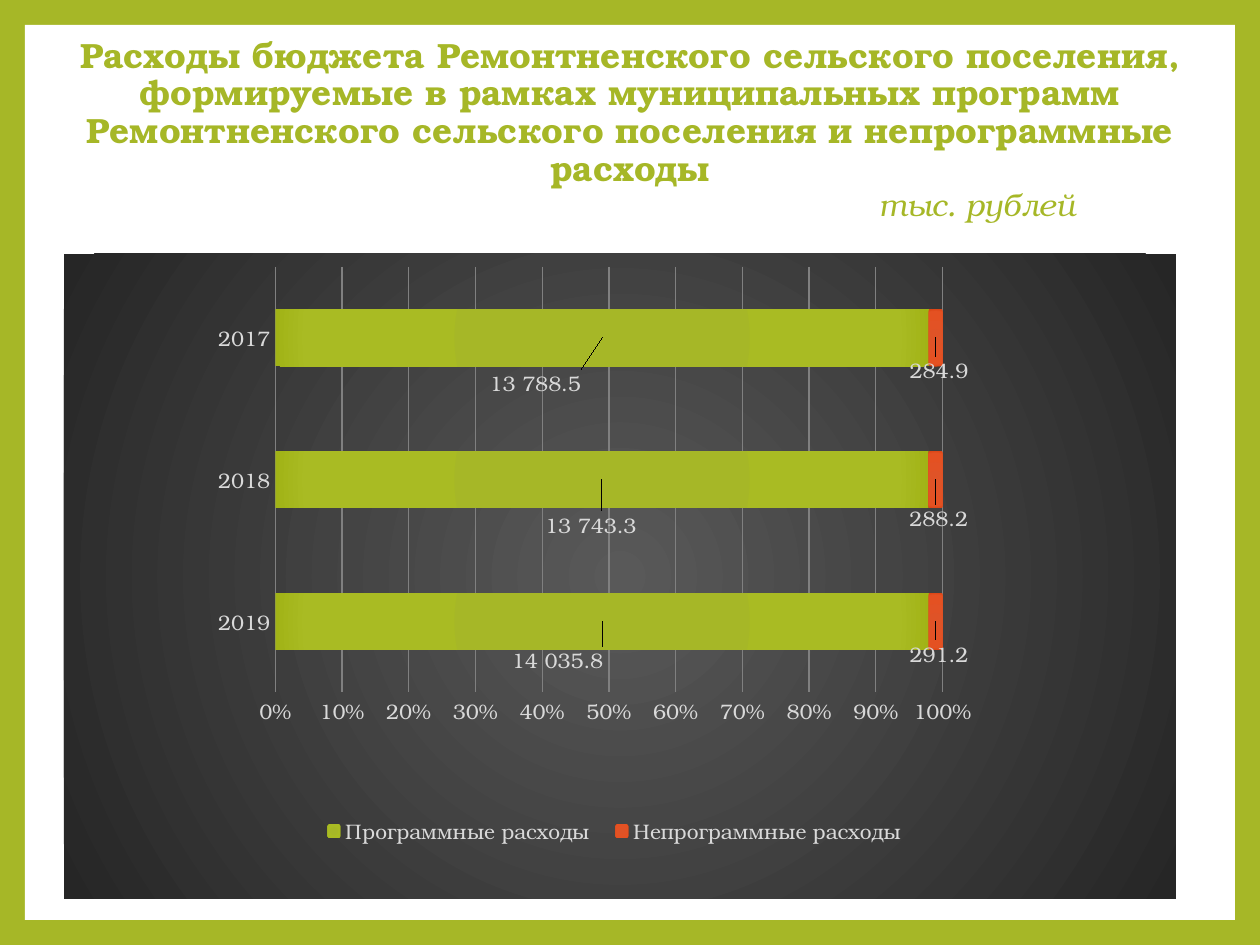
"""Build the slide on programme and non-programme budget spending."""
from dataclasses import dataclass

from lxml.etree import SubElement, fromstring
from pptx import Presentation
from pptx.chart.data import CategoryChartData
from pptx.dml.color import RGBColor
from pptx.enum.chart import XL_CHART_TYPE, XL_LEGEND_POSITION, XL_TICK_MARK
from pptx.enum.shapes import MSO_SHAPE
from pptx.enum.text import MSO_ANCHOR, MSO_AUTO_SIZE, PP_ALIGN
from pptx.oxml.ns import nsdecls, qn
from pptx.util import Pt


@dataclass(frozen=True)
class Theme:
    green: RGBColor = RGBColor.from_string("A6B727")
    white: RGBColor = RGBColor.from_string("FFFFFF")
    label: RGBColor = RGBColor.from_string("D9D9D9")
    grid: RGBColor = RGBColor.from_string("808080")
    backdrop: tuple = ((0, "595959"), (100, "262626"))
    programme: tuple = ((0, "A6B727"), (90, "A9BB23"), (100, "A1B316"))
    other: tuple = ((0, "DF5327"), (90, "E45122"), (100, "DB4313"))
    font: str = "TeX Gyre Bonum"
    title_size: int = 20
    unit_size: int = 18
    chart_size: int = 12


theme = Theme()
PX = 914400 / 126
NUMBER_FORMAT = r"#\ ##0.0"


def radial_fill(stops, focus):
    colors = "".join(
        f'<a:gs pos="{position * 1000}"><a:srgbClr val="{color}"/></a:gs>'
        for position, color in stops
    )
    edges = " ".join(f'{side}="{focus * 1000}"' for side in "ltrb")
    return fromstring(
        f'<a:gradFill {nsdecls("a")} rotWithShape="1"><a:gsLst>{colors}</a:gsLst>'
        f'<a:path path="circle"><a:fillToRect {edges}/></a:path></a:gradFill>'
    )


def set_layout(parent, index, **settings):
    for old in parent.findall(qn("c:layout")):
        parent.remove(old)
    layout = fromstring(f'<c:layout {nsdecls("c")}><c:manualLayout/></c:layout>')
    for name, value in settings.items():
        SubElement(layout[0], qn(f"c:{name}")).set("val", str(value))
    parent.insert(index, layout)


deck = Presentation()
deck.slide_width, deck.slide_height = round(1260 * PX), round(945 * PX)
page = deck.slides.add_slide(deck.slide_layouts[5])
page.background.fill.solid()
page.background.fill.fore_color.rgb = theme.green

panel = page.shapes.add_shape(
    MSO_SHAPE.RECTANGLE, *(round(length * PX) for length in (25, 25, 1210, 895))
)
panel.shadow.inherit = False
panel.fill.solid()
panel.fill.fore_color.rgb = theme.white
panel.line.fill.background()

title = page.shapes.title
title._element.addprevious(panel._element)
title.left, title.top, title.width, title.height = (
    round(length * PX) for length in (0, 36, 1260, 189)
)
frame = title.text_frame
frame.text = (
    "Расходы бюджета Ремонтненского сельского поселения, формируемые в рамках "
    "муниципальных программ Ремонтненского сельского поселения "
    "и непрограммные расходы\nтыс. рублей"
)
frame.word_wrap = True
frame.auto_size = MSO_AUTO_SIZE.NONE
frame.vertical_anchor = MSO_ANCHOR.MIDDLE
heading, unit = frame.paragraphs
heading.alignment, unit.alignment = PP_ALIGN.CENTER, PP_ALIGN.LEFT
unit._p.get_or_add_pPr().set("marL", str(round(866 * PX)))
for para, size in ((heading, theme.title_size), (unit, theme.unit_size)):
    para.line_spacing = 0.9
    para.space_before = Pt(0)
    span = para.runs[0]
    span.font.name = theme.font
    span.font.size = Pt(size)
    span.font.color.rgb = theme.green
    span.font.bold = para is heading
    span.font.italic = para is unit

spending = CategoryChartData(number_format=NUMBER_FORMAT)
spending.categories = ["2019", "2018", "2017"]
spending.add_series("Программные расходы", (14035.8, 13743.3, 13788.5))
spending.add_series("Непрограммные расходы", (291.2, 288.2, 284.9))
chart = page.shapes.add_chart(
    XL_CHART_TYPE.BAR_STACKED_100,
    *(round(length * PX) for length in (64, 254, 1112, 645)),
    spending,
).chart
chart.has_title = False
chart.has_legend = True
chart.legend.position = XL_LEGEND_POSITION.BOTTOM
chart.legend.include_in_layout = False

category_axis, value_axis = chart.category_axis, chart.value_axis
for axis in (category_axis, value_axis):
    axis.major_tick_mark = axis.minor_tick_mark = XL_TICK_MARK.NONE
    axis.format.line.fill.background()
category_axis.has_major_gridlines = False
value_axis.minimum_scale, value_axis.maximum_scale = 0, 1
value_axis.major_unit = 0.1
value_axis.tick_labels.number_format = "0%"
value_axis.tick_labels.number_format_is_linked = False
value_axis.has_major_gridlines = True
value_axis.major_gridlines.format.line.color.rgb = theme.grid
value_axis.major_gridlines.format.line.width = Pt(0.75)

plot = chart.plots[0]
plot.gap_width, plot.overlap = 150, 100
plot.vary_by_categories = False
fonts = [chart.font, chart.legend.font, category_axis.tick_labels.font, value_axis.tick_labels.font]
label_shifts = (
    ((-0.04, 0.06), (-0.01, 0.07), (-0.06, 0.07)),
    ((0, 0.05), (0, 0.06), (0, 0.05)),
)
for series, stops, shifts in zip(plot.series, (theme.programme, theme.other), label_shifts):
    series.format.fill.solid()
    solid = series._element.spPr.find(qn("a:solidFill"))
    solid.getparent().replace(solid, radial_fill(stops, 100))
    labels = series.data_labels
    labels.show_value = True
    labels.number_format = NUMBER_FORMAT
    labels.number_format_is_linked = False
    fonts.append(labels.font)
    fonts.extend(series.points[index].data_label.font for index in range(len(shifts)))
    for label, (across, down) in zip(series._element.iter(qn("c:dLbl")), shifts):
        set_layout(label, 1, x=across, y=down)
        label.insert(2, fromstring(
            f'<c:numFmt {nsdecls("c")} formatCode="{NUMBER_FORMAT}" sourceLinked="0"/>'
        ))

for font in fonts:
    font.name = theme.font
    font.size = Pt(theme.chart_size)
    font.color.rgb = theme.label

chart_area = chart._chartSpace.find(qn("c:chart"))
backdrop = fromstring(f'<c:spPr {nsdecls("c", "a")}><a:ln><a:noFill/></a:ln></c:spPr>')
backdrop.insert(0, radial_fill(theme.backdrop, 50))
chart_area.addnext(backdrop)
set_layout(
    chart_area.find(qn("c:plotArea")), 0, layoutTarget="inner",
    xMode="edge", yMode="edge", x=0.19, y=0.02, w=0.6, h=0.66,
)
set_layout(
    chart_area.find(qn("c:legend")), 1,
    xMode="edge", yMode="edge", x=0.22, y=0.87, w=0.55, h=0.05,
)

deck.save("out.pptx")
